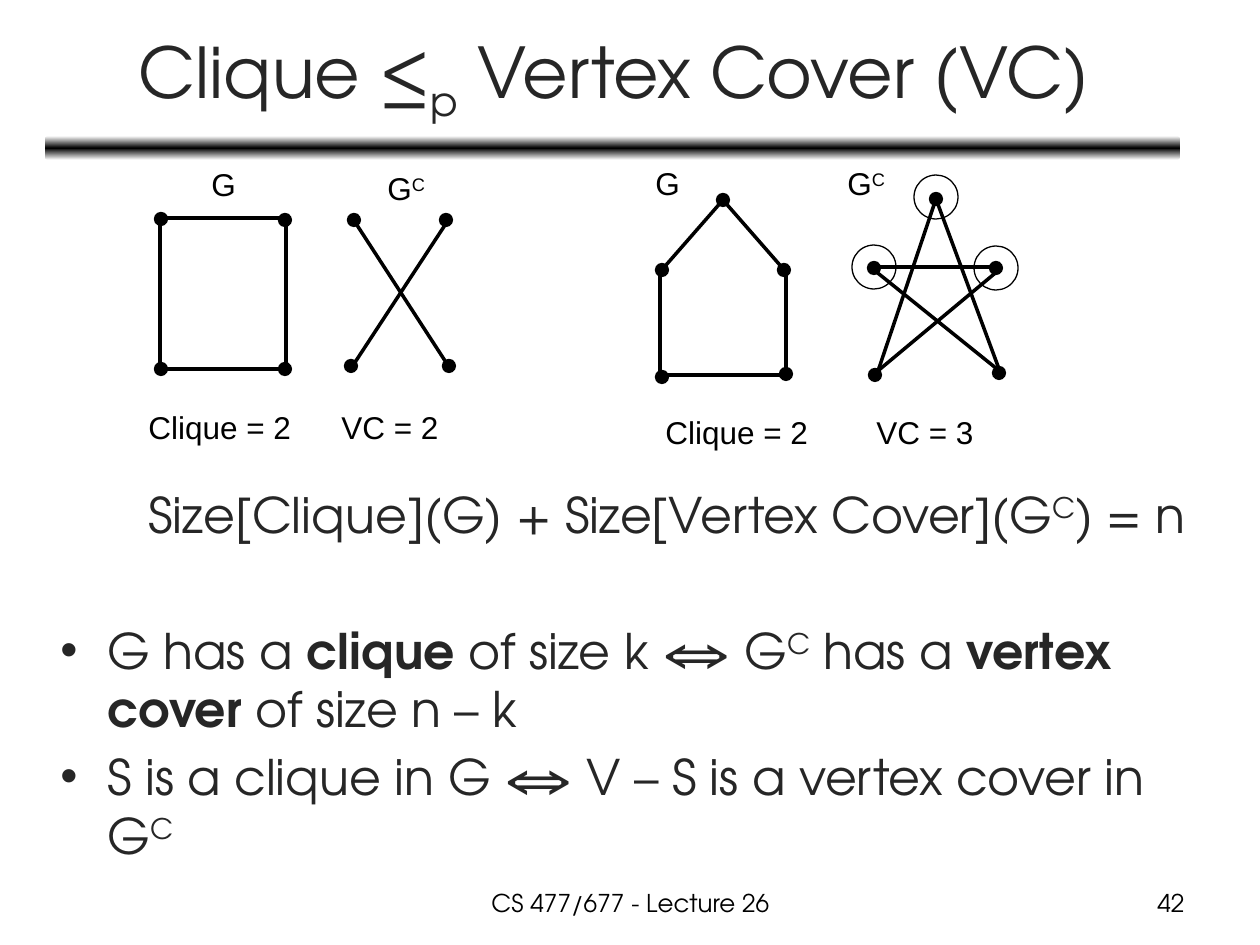
from copy import deepcopy

from lxml.etree import SubElement
from pptx import Presentation
from pptx.dml.color import RGBColor
from pptx.enum.shapes import MSO_CONNECTOR as Connector, MSO_SHAPE as Shape
from pptx.enum.text import MSO_ANCHOR as Anchor, MSO_AUTO_SIZE as AutoSize, PP_ALIGN as Align
from pptx.oxml.ns import qn
from pptx.util import Pt

EMU_PER_PX = 914400 / 126
BLACK, WHITE, GREY = "000000", "FFFFFF", "262626"
HEADING_FONT, LABEL_FONT = "TeX Gyre Adventor", "Arial"
SUB, SUP = -25, 30
DOT = 13

GRAPHS = [
    {
        "box": (160, 218, 126, 151),
        "dots": [(161, 219), (285, 220), (161, 369), (285, 369)],
    },
    {
        "edges": [(353, 219, 451, 370), (449, 219, 350, 370)],
        "dots": [(354, 220), (446, 220), (351, 366), (449, 366)],
    },
    {
        "box": (660, 273, 126, 102),
        "edges": [(660, 272, 723, 200), (786, 272, 723, 200)],
        "gap": (662, 273, 785, 273),
        "dots": [(723, 200), (662, 270), (784, 270), (786, 374), (662, 377)],
    },
    {
        "edges": [
            (876, 377, 936, 199),
            (1002, 377, 936, 199),
            (876, 267, 997, 267),
            (874, 270, 1002, 373),
            (999, 270, 873, 375),
        ],
        "dots": [(936, 199), (874, 268), (996, 268), (999, 373), (875, 375)],
    },
]
COVER_RINGS = [(874, 267), (936, 197), (996, 268)]

LABELS = [
    (136, 402, 168, [("Clique = 2",)]),
    (329, 402, 122, [("VC = 2",)]),
    (653, 407, 168, [("Clique = 2",)]),
    (864, 407, 122, [("VC = 3",)]),
    (199, 159, 50, [("G",)]),
    (643, 158, 50, [("G",)]),
    (375, 163, 66, [("G",), ("C", SUP)]),
    (835, 158, 66, [("G",), ("C", SUP)]),
]

FORMULA = [("Size[Clique](G) + Size[Vertex Cover](G",), ("C", SUP), (") = n",)]
BULLETS = [
    [
        ("G has a ",),
        ("clique", 0, True),
        (" of size k ⟺ G",),
        ("C", SUP),
        (" has a ",),
        ("vertex cover", 0, True),
        (" of size n – k",),
    ],
    [("S is a clique in G ⟺ V – S is a vertex cover in G",), ("C", SUP)],
]


def px(length):
    return round(length * EMU_PER_PX)


def color(value):
    return RGBColor.from_string(value)


def add_runs(paragraph, runs, size, font, fill):
    for text, baseline, bold in ((*run, 0, False)[:3] if len(run) < 3 else run for run in runs):
        run = paragraph.add_run()
        run.text = text
        run.font.size = Pt(size)
        run.font.name = font
        run.font.bold = bold
        run.font.color.rgb = color(fill)
        if baseline:
            run._r.get_or_add_rPr().set("baseline", str(baseline * 1000))


def add_text(slide, box, runs, size, font, fill=BLACK, align=Align.LEFT, wrap=True):
    frame = slide.shapes.add_textbox(*map(px, box)).text_frame
    frame.word_wrap = wrap
    frame.auto_size = AutoSize.NONE if wrap else AutoSize.SHAPE_TO_FIT_TEXT
    paragraph = frame.paragraphs[0]
    paragraph.alignment = align
    add_runs(paragraph, runs, size, font, fill)
    return frame


def add_outline(shapes, kind, box, fill=None, width=0.75):
    shape = shapes.add_shape(kind, *map(px, box))
    shape.shadow.inherit = False
    if fill:
        shape.fill.solid()
        shape.fill.fore_color.rgb = color(fill)
    else:
        shape.fill.background()
    shape.line.color.rgb = color(BLACK)
    shape.line.width = Pt(width)


def add_circle(shapes, center, size, fill=None):
    x, y = center
    add_outline(shapes, Shape.OVAL, (x - size / 2, y - size / 2, size, size), fill)


def add_edge(shapes, ends, stroke=BLACK, width=2):
    edge = shapes.add_connector(Connector.STRAIGHT, *map(px, ends))
    edge.line.color.rgb = color(stroke)
    edge.line.width = Pt(width)
    SubElement(edge._element.spPr, qn("a:effectLst"))


def add_graph(slide, graph):
    shapes = slide.shapes.add_group_shape().shapes
    if "box" in graph:
        add_outline(shapes, Shape.RECTANGLE, graph["box"], WHITE, 2)
    for ends in graph.get("edges", []):
        add_edge(shapes, ends)
    if "gap" in graph:
        add_edge(shapes, graph["gap"], WHITE, 3)
    for center in graph["dots"]:
        add_circle(shapes, center, DOT, BLACK)


def add_rule(slide):
    rule = slide.shapes.add_shape(Shape.ROUNDED_RECTANGLE, *map(px, (45, 136, 1135, 24)))
    rule.shadow.inherit = False
    rule.line.fill.background()
    rule.fill.gradient()
    rule.fill.gradient_angle = 90
    first = rule.fill.gradient_stops[0]._gs
    first.addnext(deepcopy(first))
    for stop, (position, value) in zip(
        rule.fill.gradient_stops, [(0, WHITE), (0.5, BLACK), (1, WHITE)]
    ):
        stop.position = position
        stop.color.rgb = color(value)


def set_title(slide):
    title = slide.shapes.title
    title.left, title.top, title.width, title.height = map(px, (47, 14, 1134, 125))
    frame = title.text_frame
    frame.vertical_anchor = Anchor.MIDDLE
    frame.auto_size = AutoSize.NONE
    frame.paragraphs[0].alignment = Align.CENTER
    runs = [("Clique ≤",), ("p", SUB), (" Vertex Cover (VC)",)]
    add_runs(frame.paragraphs[0], runs, 40, HEADING_FONT, GREY)


def add_bullet(frame, runs, space_before):
    paragraph = frame.add_paragraph()
    paragraph.space_before = Pt(space_before)
    properties = paragraph._p.get_or_add_pPr()
    properties.set("marL", str(px(47)))
    properties.set("indent", str(px(-47)))
    SubElement(properties, qn("a:buFont"), typeface=LABEL_FONT)
    SubElement(properties, qn("a:buChar"), char="•")
    add_runs(paragraph, runs, 28, HEADING_FONT, GREY)


def add_body(slide):
    frame = add_text(slide, (48, 478, 1177, 422), FORMULA, 28, HEADING_FONT, GREY)
    formula = frame.paragraphs[0]
    formula.space_before = Pt(5)
    formula._p.get_or_add_pPr().set("marL", str(px(88)))
    for runs, space_before in zip(BULLETS, (44, 5)):
        add_bullet(frame, runs, space_before)


def main():
    presentation = Presentation()
    presentation.slide_width, presentation.slide_height = px(1260), px(945)
    slide = presentation.slides.add_slide(presentation.slide_layouts[5])
    add_rule(slide)
    set_title(slide)
    add_body(slide)
    for graph in GRAPHS:
        add_graph(slide, graph)
    for center in COVER_RINGS:
        add_circle(slide.shapes, center, 44)
    for left, top, width, runs in LABELS:
        add_text(slide, (left, top, width, 50), runs, 18, LABEL_FONT, wrap=False)
    footer = [("CS 477/677 - Lecture 26",)]
    add_text(slide, (431, 882, 399, 44), footer, 14, HEADING_FONT, align=Align.CENTER)
    add_text(slide, (903, 882, 294, 44), [("42",)], 14, HEADING_FONT, align=Align.RIGHT)
    presentation.save("out.pptx")


if __name__ == "__main__":
    main()
